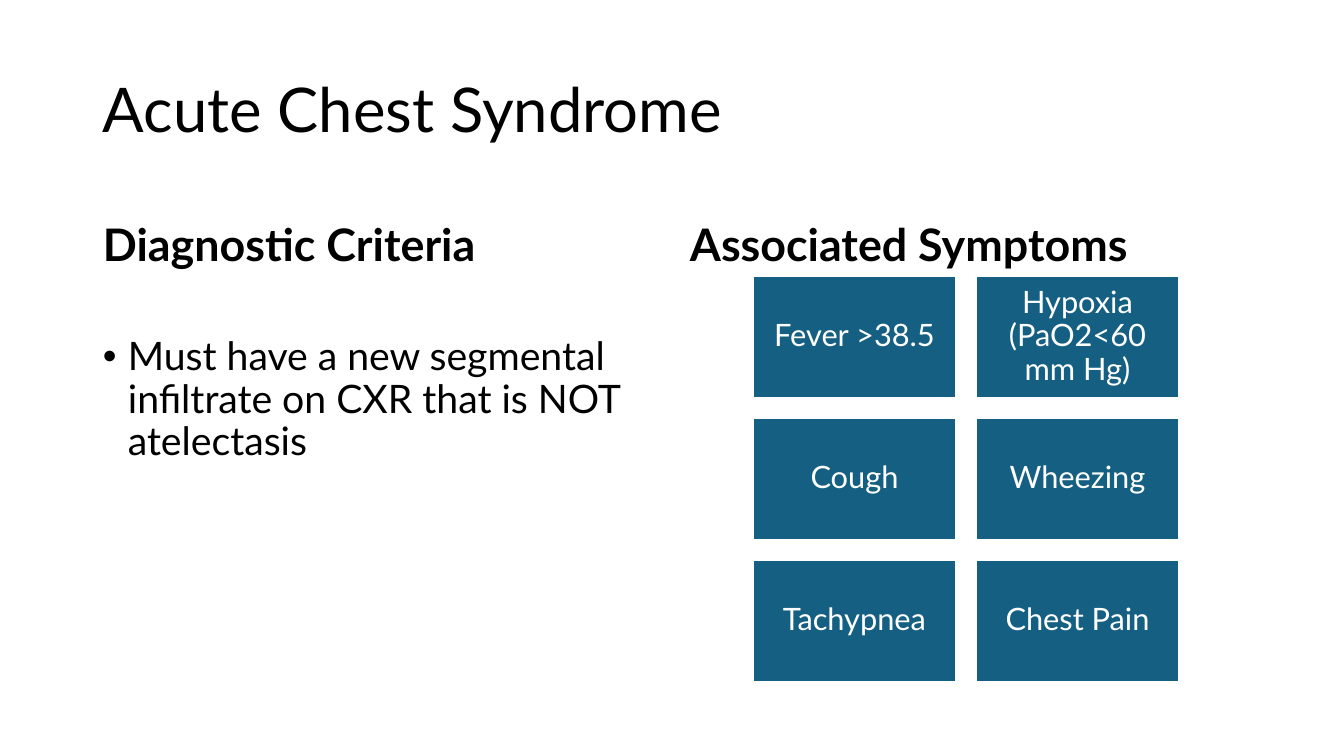
from dataclasses import dataclass

from lxml import etree
from pptx import Presentation
from pptx.dml.color import RGBColor
from pptx.enum.shapes import MSO_SHAPE
from pptx.enum.text import MSO_ANCHOR, PP_ALIGN
from pptx.oxml.ns import qn
from pptx.util import Pt

RECT = MSO_SHAPE.RECTANGLE
TOP, MIDDLE, BOTTOM = MSO_ANCHOR.TOP, MSO_ANCHOR.MIDDLE, MSO_ANCHOR.BOTTOM
LEFT, CENTER = PP_ALIGN.LEFT, PP_ALIGN.CENTER
EMU_PER_PX = 914400 / 100.8


def px(n):
    return round(n * EMU_PER_PX)


@dataclass(frozen=True)
class Theme:
    font: str = "Lato"
    ink: RGBColor = RGBColor(0x00, 0x00, 0x00)
    white: RGBColor = RGBColor(0xFF, 0xFF, 0xFF)
    tile: RGBColor = RGBColor(0x15, 0x60, 0x82)
    title: int = 44
    heading: int = 32
    body: int = 28
    label: int = 22
    border: float = 1.5
    leading: float = 0.9


class Deck:
    """Holds the theme and the current slide, and adds styled elements to it."""

    def __init__(self, prs, theme):
        self.theme = theme
        self.s = prs.slides.add_slide(prs.slide_layouts[6])

    def set_text(self, sp, text, size, color, anchor, align=LEFT, bold=False):
        tf = sp.text_frame
        tf.word_wrap = True
        tf.vertical_anchor = anchor
        tf.text = text
        p = tf.paragraphs[0]
        p.alignment = align
        p.line_spacing = self.theme.leading
        font = p.runs[0].font
        font.name, font.size, font.bold = self.theme.font, Pt(size), bold
        font.color.rgb = color
        return p

    def text(self, box, text, size, anchor, bold=False):
        sp = self.s.shapes.add_textbox(*map(px, box))
        return self.set_text(sp, text, size, self.theme.ink, anchor, bold=bold)

    def title(self, box, text):
        self.text(box, text, self.theme.title, MIDDLE)

    def heading(self, box, text):
        self.text(box, text, self.theme.heading, BOTTOM, bold=True)

    def bullet(self, box, text, indent):
        p = self.text(box, text, self.theme.body, TOP)
        pPr = p._p.get_or_add_pPr()
        pPr.set("marL", str(px(indent)))
        pPr.set("indent", str(-px(indent)))
        etree.SubElement(pPr, qn("a:buFont"), typeface="Arial")
        etree.SubElement(pPr, qn("a:buChar"), char="•")

    def tile(self, box, text):
        sp = self.s.shapes.add_shape(RECT, *map(px, box))
        sp.shadow.inherit = False
        sp.fill.solid()
        sp.fill.fore_color.rgb = self.theme.tile
        sp.line.color.rgb = self.theme.white
        sp.line.width = Pt(self.theme.border)
        tf = sp.text_frame
        tf.margin_left = tf.margin_right = tf.margin_top = tf.margin_bottom = px(9)
        self.set_text(sp, text, self.theme.label, self.theme.white, MIDDLE, CENTER)

    def tile_grid(self, origin, size, gap, columns, labels):
        (left, top), (width, height) = origin, size
        for i, label in enumerate(labels):
            row, col = divmod(i, columns)
            x = left + col * (width + gap)
            y = top + row * (height + gap)
            self.tile((x, y, width, height), label)


def main():
    prs = Presentation()
    prs.slide_width, prs.slide_height = px(1344), px(756)
    deck = Deck(prs, Theme())
    deck.title((93, 40, 1159, 146), "Acute Chest Syndrome")
    deck.heading((93, 186, 568, 90), "Diagnostic Criteria")
    deck.bullet((93, 332, 568, 350),
                "Must have a new segmental infiltrate on CXR that is NOT atelectasis", 25)
    deck.heading((680, 186, 572, 90), "Associated Symptoms")
    deck.tile_grid((753, 276), (203, 122), 20, 2, [
        "Fever >38.5", "Hypoxia (PaO2<60 mm Hg)",
        "Cough", "Wheezing",
        "Tachypnea", "Chest Pain",
    ])
    prs.save("out.pptx")


if __name__ == "__main__":
    main()
